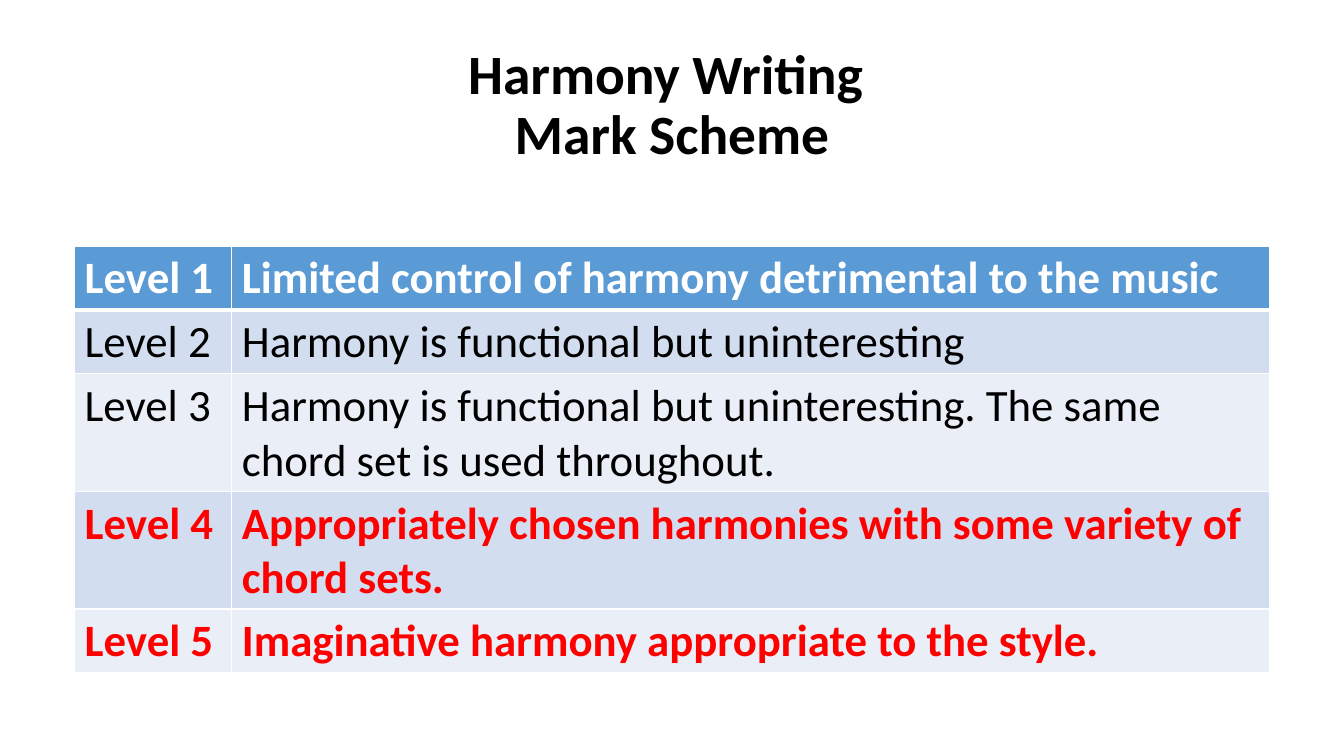
import pptx
import pptx.util
import pptx.dml.color
import pptx.enum.text
import pptx.oxml
import pptx.oxml.ns

HUES = {"ink": "000000", "paper": "FFFFFF", "head": "5B9BD5",
        "dark": "D2DEEF", "light": "EAEFF7", "key": "FF0000"}

LEVELS = [
    ("Limited control of harmony detrimental to the music", "paper", True),
    ("Harmony is functional but uninteresting", "ink", False),
    ("Harmony is functional but uninteresting. The same chord set is used throughout.", "ink", False),
    ("Appropriately chosen harmonies with some variety of chord sets.", "key", True),
    ("Imaginative harmony appropriate to the style.", "key", True),
]


class Deck:
    """Holds the style and the current slide; lengths are percentages of the slide."""

    def __init__(self):
        self.file = pptx.Presentation()
        self.file.slide_width = pptx.util.Inches(13.33)
        self.file.slide_height = pptx.util.Inches(7.5)
        self.slide = self.file.slides.add_slide(self.file.slide_layouts[6])
        self.font = "Calibri"

    def wide(self, share):
        return round(self.file.slide_width * share / 100)

    def high(self, share):
        return round(self.file.slide_height * share / 100)

    def area(self, left, top, width, height):
        return self.wide(left), self.high(top), self.wide(width), self.high(height)

    def hue(self, name):
        return pptx.dml.color.RGBColor.from_string(HUES[name])

    def run(self, para, text, size, tint, bold):
        run = para.add_run()
        run.text = text
        run.font.name = self.font
        run.font.size = pptx.util.Pt(size)
        run.font.bold = bold
        run.font.color.rgb = self.hue(tint)

    def title(self, lines, *place):
        frame = self.slide.shapes.add_textbox(*self.area(*place)).text_frame
        frame.word_wrap = True
        frame.vertical_anchor = pptx.enum.text.MSO_ANCHOR.MIDDLE
        para = frame.paragraphs[0]
        para.alignment = pptx.enum.text.PP_ALIGN.CENTER
        para.line_spacing = 0.9
        for index, line in enumerate(lines):
            if index:
                para.add_line_break()
            self.run(para, line, 39.6, "ink", True)

    def edge(self, cell, side, width):
        xml = (f'<a:ln{side} {pptx.oxml.ns.nsdecls("a")} w="{pptx.util.Pt(width)}">'
               f'<a:solidFill><a:srgbClr val="{HUES["paper"]}"/></a:solidFill></a:ln{side}>')
        cell._tc.get_or_add_tcPr().append(pptx.oxml.parse_xml(xml))

    def cell(self, cell, text, tint, bold, fill, rims):
        for side in "LRTB":
            self.edge(cell, side, rims.get(side, 1))
        cell.fill.solid()
        cell.fill.fore_color.rgb = self.hue(fill)
        self.run(cell.text_frame.paragraphs[0], text, 32, tint, bold)

    def table(self, levels, left, top, cols, rows):
        place = self.area(left, top, sum(cols), sum(rows))
        table = self.slide.shapes.add_table(len(rows), len(cols), *place).table
        for col, width in zip(table.columns, cols):
            col.width = self.wide(width)
        for row, height in zip(table.rows, rows):
            row.height = self.high(height)
        for index, (text, tint, bold) in enumerate(levels):
            fill = ("light", "dark")[index % 2] if index else "head"
            rims = {0: {"B": 3}, 1: {"T": 3}}.get(index, {})
            for col, words in enumerate((f"Level {index + 1}", text)):
                self.cell(table.cell(index, col), words, tint, bold, fill, rims)


def main():
    deck = Deck()
    deck.title(("Harmony Writing ", "Mark Scheme"), 16.25, 5.73, 67.5, 16.67)
    deck.table(LEVELS, 5.55, 32.53, (11.7, 77.2), (7.87, 7.87, 8.93, 8.67, 7.87))
    deck.file.save("out.pptx")


if __name__ == "__main__":
    main()
